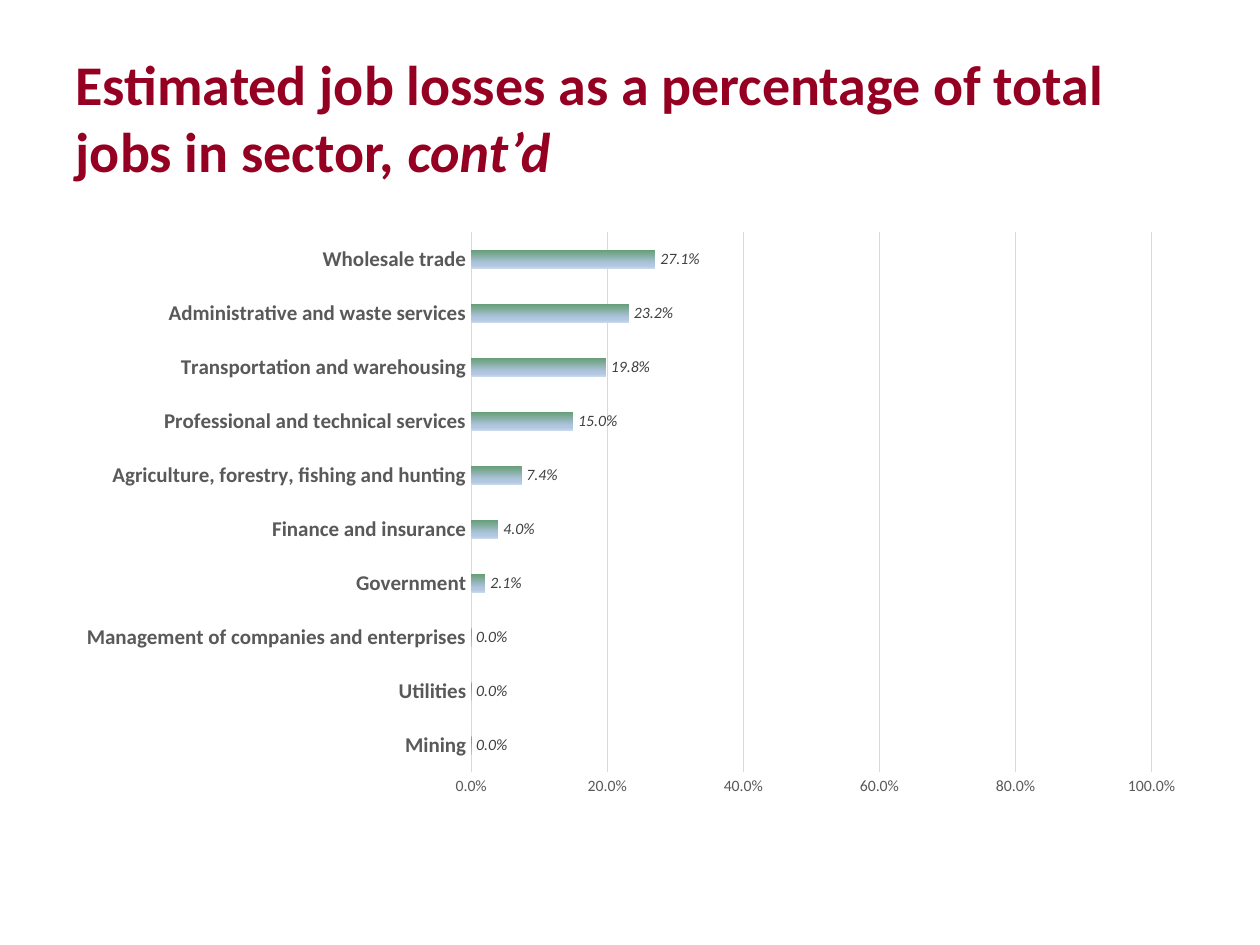
import pptx
import pptx.chart.data
import pptx.dml.color
import pptx.enum.chart
import pptx.enum.text
import pptx.oxml.ns
import pptx.util
from lxml import etree

Inches = pptx.util.Inches
Pt = pptx.util.Pt
RGBColor = pptx.dml.color.RGBColor
qn = pptx.oxml.ns.qn

CRIMSON = RGBColor(0x95, 0x00, 0x22)
BLACK = RGBColor(0x00, 0x00, 0x00)
DARK_GRAY = RGBColor(0x40, 0x40, 0x40)
GRAY = RGBColor(0x59, 0x59, 0x59)
LIGHT_GRAY = RGBColor(0xD9, 0xD9, 0xD9)
GREEN = RGBColor(0x64, 0x9C, 0x73)
BLUE = RGBColor(0xB0, 0xC6, 0xE1)
PALE_BLUE = RGBColor(0xCA, 0xD9, 0xEB)

BAR_STOPS = [(0, GREEN), (74, BLUE), (83, BLUE), (100, PALE_BLUE)]
PLOT_LAYOUT = {"x": 0.36, "y": 0.02, "w": 0.6, "h": 0.92}
PERCENT = "0.0%"

JOB_LOSSES = [
    ("Mining", 0),
    ("Utilities", 0),
    ("Management of companies and enterprises", 0),
    ("Government", 0.021),
    ("Finance and insurance", 0.04),
    ("Agriculture, forestry, fishing and hunting", 0.074),
    ("Professional and technical services", 0.15),
    ("Transportation and warehousing", 0.198),
    ("Administrative and waste services", 0.232),
    ("Wholesale trade", 0.271),
]


class SlideBuilder:
    font_name = "Calibri"

    def __init__(self, slide):
        self.slide = slide

    def style(self, font, size, color, bold=False, italic=False):
        font.name = self.font_name
        font.size = Pt(size)
        font.color.rgb = color
        font.bold = bold
        font.italic = italic

    def title(self, runs, left, top, width, height):
        title = self.slide.shapes.title
        title.left, title.top = Inches(left), Inches(top)
        title.width, title.height = Inches(width), Inches(height)
        frame = title.text_frame
        frame.word_wrap = True
        frame.auto_size = pptx.enum.text.MSO_AUTO_SIZE.NONE
        frame.vertical_anchor = pptx.enum.text.MSO_ANCHOR.MIDDLE
        paragraph = frame.paragraphs[0]
        paragraph.alignment = pptx.enum.text.PP_ALIGN.LEFT
        for text, italic in runs:
            run = paragraph.add_run()
            run.text = text
            self.style(run.font, 32, CRIMSON, bold=True, italic=italic)

    def bar_chart(self, rows, left, top, width, height):
        data = pptx.chart.data.CategoryChartData(number_format=PERCENT)
        data.categories = [sector for sector, _ in rows]
        data.add_series("Series 1", [share for _, share in rows])
        chart = self.slide.shapes.add_chart(
            pptx.enum.chart.XL_CHART_TYPE.BAR_CLUSTERED,
            Inches(left), Inches(top), Inches(width), Inches(height), data,
        ).chart
        self.style(chart.font, 10, BLACK)
        chart.has_legend = False
        chart.has_title = False
        self.axes(chart)
        self.bars(chart.plots[0])
        self.plot_layout(chart)

    def axes(self, chart):
        sectors, shares = chart.category_axis, chart.value_axis
        for axis in (sectors, shares):
            axis.major_tick_mark = pptx.enum.chart.XL_TICK_MARK.NONE
            axis.minor_tick_mark = pptx.enum.chart.XL_TICK_MARK.NONE
        self.style(sectors.tick_labels.font, 12, GRAY, bold=True)
        self.style(shares.tick_labels.font, 9, GRAY)
        shares.tick_labels.number_format = PERCENT
        shares.tick_labels.number_format_is_linked = False
        shares.minimum_scale, shares.maximum_scale = 0, 1
        shares.major_unit = 0.2
        shares.has_major_gridlines = True
        shares.format.line.fill.background()
        for line in (sectors.format.line, shares.major_gridlines.format.line):
            line.color.rgb = LIGHT_GRAY
            line.width = Pt(0.75)

    def bars(self, plot):
        plot.gap_width = 182
        plot.vary_by_categories = False
        plot.has_data_labels = True
        labels = plot.data_labels
        labels.show_value = True
        labels.number_format = PERCENT
        labels.number_format_is_linked = False
        labels.position = pptx.enum.chart.XL_LABEL_POSITION.OUTSIDE_END
        self.style(labels.font, 9, DARK_GRAY, italic=True)
        series = plot.series[0]
        series.invert_if_negative = False
        series.format.fill.gradient()
        gradient = next(series.format.fill._xPr.iter(qn("a:gradFill")))
        for child in list(gradient):
            gradient.remove(child)
        stops = etree.SubElement(gradient, qn("a:gsLst"))
        for position, color in BAR_STOPS:
            stop = etree.SubElement(stops, qn("a:gs"), pos=str(position * 1000))
            etree.SubElement(stop, qn("a:srgbClr"), val=str(color))
        etree.SubElement(gradient, qn("a:lin"), ang="5400000", scaled="0")

    def plot_layout(self, chart):
        plot_area = next(chart.element.iter(qn("c:plotArea")))
        for unset in plot_area.findall(qn("c:layout")):
            plot_area.remove(unset)
        layout = etree.Element(qn("c:layout"))
        manual = etree.SubElement(layout, qn("c:manualLayout"))
        settings = {"layoutTarget": "inner", "xMode": "edge", "yMode": "edge", **PLOT_LAYOUT}
        for name, value in settings.items():
            etree.SubElement(manual, qn(f"c:{name}"), val=str(value))
        plot_area.insert(0, layout)


def main():
    presentation = pptx.Presentation()
    presentation.slide_width = Inches(10)
    presentation.slide_height = Inches(7.5)
    slide = presentation.slides.add_slide(presentation.slide_layouts[5])
    builder = SlideBuilder(slide)
    builder.title(
        [
            ("Estimated job losses as a percentage of total jobs in sector, ", False),
            ("cont’d", True),
        ],
        0.5, 0.3, 9, 1.25,
    )
    builder.bar_chart(JOB_LOSSES, 0.5, 1.75, 9, 4.66)
    presentation.save("out.pptx")


if __name__ == "__main__":
    main()
